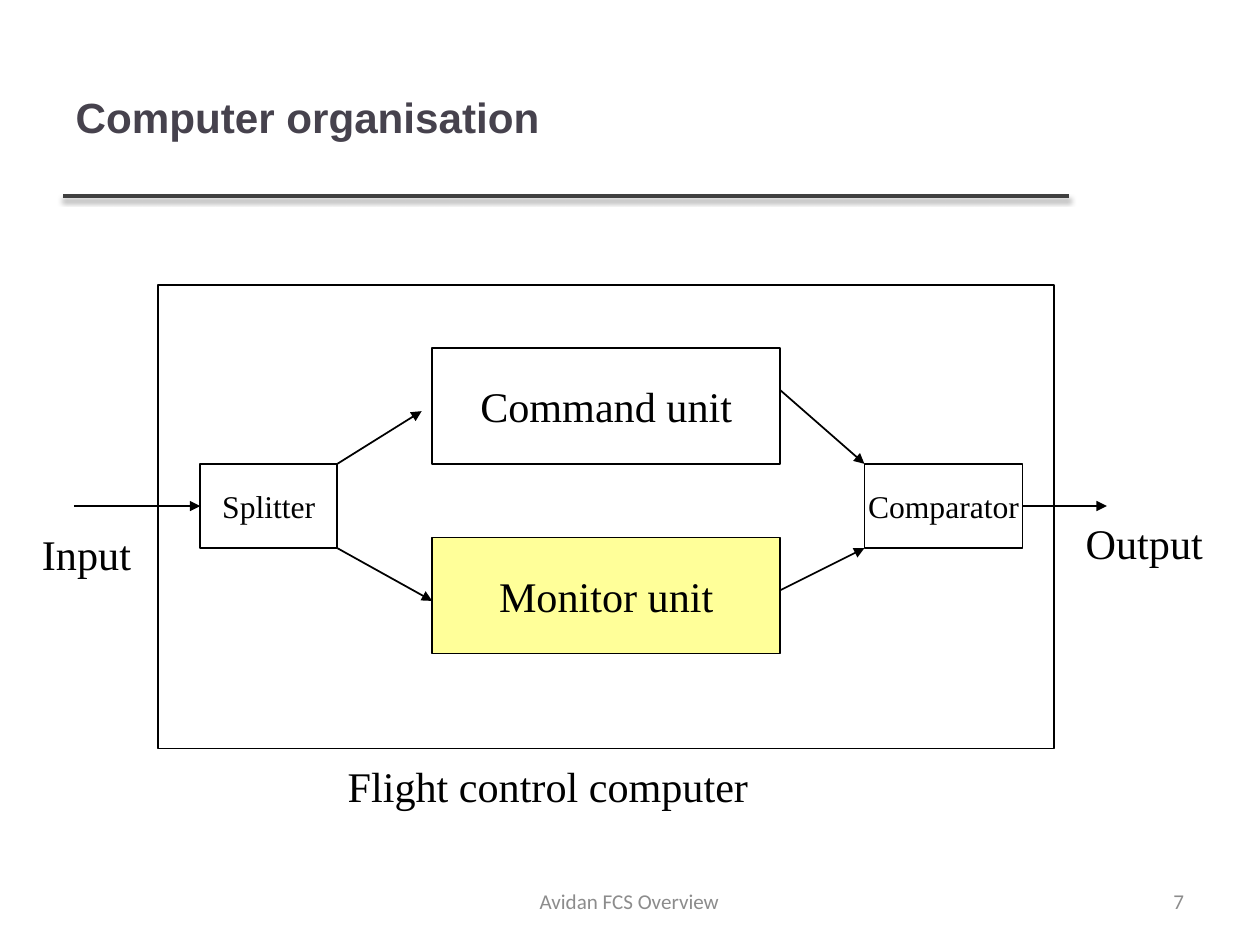
from lxml import etree
from pptx import Presentation
from pptx import util as u
from pptx.dml import color
from pptx.enum import shapes, text
from pptx.oxml import ns

CELL = u.Inches(1) / 12  # the diagram sits on a grid of twelfths of an inch
INK, WHITE, YELLOW, GREY = "000000", "FFFFFF", "FFFF99", "8C8C8C"
SERIF = {"name": "Times New Roman", "size": u.Pt(24)}
SMALL = {"name": "Times New Roman", "size": u.Pt(18)}
HEADING = {"name": "Arial", "size": u.Pt(24), "bold": True}
FOOTER = {"name": "Calibri", "size": u.Pt(12)}
LEFT, CENTER, RIGHT = (text.PP_ALIGN.LEFT, text.PP_ALIGN.CENTER,
                       text.PP_ALIGN.RIGHT)


def cells(*values):
    return [u.Emu(round(value * CELL)) for value in values]


def paint(target, hex_color):
    target.rgb = color.RGBColor.from_string(hex_color)


def child(parent, tag, **attributes):
    return etree.SubElement(parent, ns.qn(tag), attributes)


def write(frame, words, font, ink=INK, align=LEFT, wrap=False):
    frame.word_wrap = wrap
    frame.vertical_anchor = text.MSO_ANCHOR.MIDDLE
    paragraph = frame.paragraphs[0]
    paragraph.alignment = align
    run = paragraph.add_run()
    run.text = words
    for key, value in font.items():
        setattr(run.font, key, value)
    paint(run.font.color, ink)


def add_label(slide, place, words, font, **layout):
    label = slide.shapes.add_textbox(*cells(*place))
    write(label.text_frame, words, font, **layout)
    return label


def add_caption(slide, place, words):
    """Add a one-line caption whose box grows with its words."""
    frame = add_label(slide, place, words, SERIF).text_frame
    frame.vertical_anchor = text.MSO_ANCHOR.TOP
    frame.auto_size = text.MSO_AUTO_SIZE.SHAPE_TO_FIT_TEXT


def add_unit(slide, place, words="", font=SERIF, fill=WHITE):
    unit = slide.shapes.add_shape(shapes.MSO_SHAPE.RECTANGLE, *cells(*place))
    unit.shadow.inherit = False
    unit.fill.solid()
    paint(unit.fill.fore_color, fill)
    paint(unit.line.color, INK)
    unit.line.width = u.Pt(1)
    if words:
        write(unit.text_frame, words, font, align=CENTER)


def add_line(slide, ends, ink=INK, width=1):
    """Draw a straight line; return it with its empty effect list."""
    line = slide.shapes.add_connector(shapes.MSO_CONNECTOR.STRAIGHT,
                                      *cells(*ends))
    paint(line.line.color, ink)
    line.line.width = u.Pt(width)
    properties = line.line._get_or_add_ln().getparent()
    return line, child(properties, "a:effectLst")


def add_arrow(slide, ends):
    arrow, _ = add_line(slide, ends)
    child(arrow.line._get_or_add_ln(), "a:tailEnd", type="triangle")


def add_title_rule(slide, ends):
    _, effects = add_line(slide, ends, "404040", 2)
    shadow = child(effects, "a:outerShdw", blurRad="40000", dist="20000",
                   dir="5400000", rotWithShape="0")
    tint = child(shadow, "a:srgbClr", val=INK)
    child(tint, "a:alpha", val="38000")


def main():
    deck = Presentation()
    deck.slide_width, deck.slide_height = u.Inches(9.96), u.Inches(7.47)
    slide = deck.slides.add_slide(deck.slide_layouts[6])

    # Heading
    add_title_rule(slide, (6, 18.6, 101.4, 18.6))
    add_label(slide, (6, 3.6, 95.3, 15), "Computer organisation", HEADING,
              ink="46424D", wrap=True)

    # Flight control computer and its units
    add_unit(slide, (15, 27, 85, 44))
    add_unit(slide, (41, 33, 33, 11), "Command unit")
    add_unit(slide, (41, 51, 33, 11), "Monitor unit", fill=YELLOW)
    add_unit(slide, (19, 44, 13, 8), "Splitter", SMALL)
    add_unit(slide, (82, 44, 15, 8), "Comparator", SMALL)

    # Signal flow
    for ends in ((7, 48, 19, 48), (32, 44, 40, 39), (32, 52, 41, 57),
                 (74, 56, 82, 52), (74, 37, 82, 44), (97, 48, 105, 48)):
        add_arrow(slide, ends)

    # Captions
    add_caption(slide, (31.8, 71.5, 40.5, 6), "Flight control computer")
    add_caption(slide, (2.8, 49.5, 10.9, 6), "Input")
    add_caption(slide, (101.8, 48.5, 13.6, 6), "Output")

    # Footer
    add_label(slide, (40.8, 83.1, 37.8, 4.8), "Avidan FCS Overview", FOOTER,
              ink=GREY, align=CENTER, wrap=True)
    add_label(slide, (85.7, 83.1, 27.8, 4.8), "7", FOOTER,
              ink=GREY, align=RIGHT, wrap=True)

    deck.save("out.pptx")


if __name__ == "__main__":
    main()
